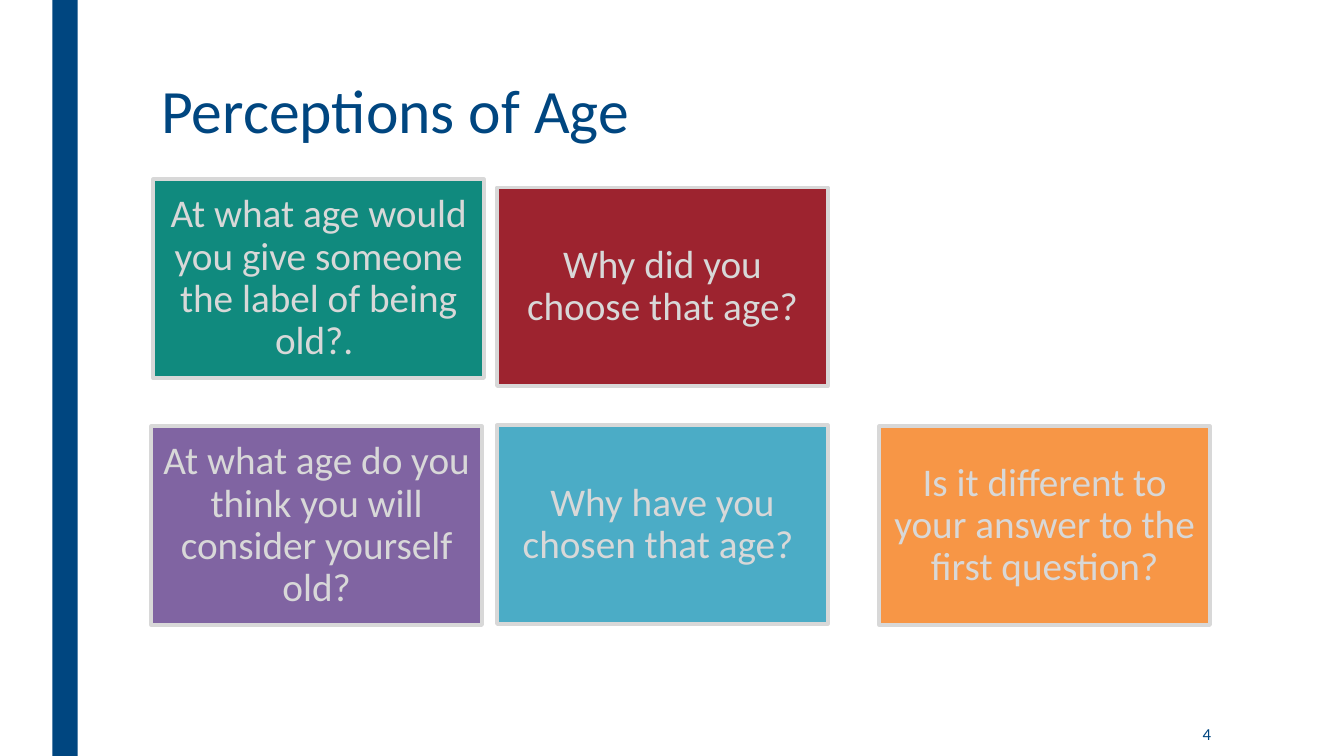
"""Build the Perceptions of Age slide."""
import pptx
import pptx.dml.color
import pptx.enum.shapes
import pptx.enum.text
import pptx.util

Inches = pptx.util.Inches
Pt = pptx.util.Pt
Align = pptx.enum.text.PP_ALIGN
Anchor = pptx.enum.text.MSO_ANCHOR


def tint(form, code):
    form.rgb = pptx.dml.color.RGBColor.from_string(code)


def apply(item, values):
    for name, value in values.items():
        setattr(item, name, value)


class Deck:
    navy = "004680"
    pale = "D8D8D8"
    font = "Calibri"

    def __init__(self):
        self.file = pptx.Presentation()
        apply(self.file, {"slide_width": Inches(13.33), "slide_height": Inches(7.5)})
        self.slide = self.file.slides.add_slide(self.file.slide_layouts[5])

    def label(self, shape, text, size, color, frame, para):
        box = shape.text_frame
        box.text = text
        apply(box, {"word_wrap": True, **frame})
        line = box.paragraphs[0]
        apply(line, para)
        apply(line.font, {"name": self.font, "size": Pt(size)})
        tint(line.font.color, color)

    def title(self, text, *place):
        shape = self.slide.shapes.title
        spot = map(Inches, place)
        apply(shape, dict(zip(("left", "top", "width", "height"), spot)))
        self.label(shape, text, 44, self.navy,
                   {"vertical_anchor": Anchor.TOP,
                    "auto_size": pptx.enum.text.MSO_AUTO_SIZE.NONE},
                   {"alignment": Align.LEFT, "line_spacing": 0.89})

    def block(self, fill, *place):
        kind = pptx.enum.shapes.MSO_SHAPE.RECTANGLE
        shape = self.slide.shapes.add_shape(kind, *map(Inches, place))
        shape.shadow.inherit = False
        shape.fill.solid()
        tint(shape.fill.fore_color, fill)
        shape.line.fill.background()
        return shape

    def card(self, text, fill, left, top):
        shape = self.block(fill, left, top, 3.28, 1.97)
        tint(shape.line.color, self.pale)
        shape.line.width = Pt(2.75)
        sides = ("left", "top", "right", "bottom")
        frame = {f"margin_{side}": Inches(0.12) for side in sides}
        self.label(shape, text, 28, self.pale,
                   {"vertical_anchor": Anchor.MIDDLE, **frame},
                   {"alignment": Align.CENTER, "line_spacing": 0.9})

    def number(self, text, *place):
        shape = self.slide.shapes.add_textbox(*map(Inches, place))
        self.label(shape, text, 12, self.navy,
                   {"vertical_anchor": Anchor.MIDDLE},
                   {"alignment": Align.RIGHT, "space_after": Pt(6)})


def main():
    deck = Deck()
    deck.block(deck.navy, 0.52, 0, 0.25, 7.5)
    deck.title("Perceptions of Age", 1.5, 0.75, 10.5, 1.62)
    deck.number("4", 10.36, 7.06, 1.75, 0.44)
    cards = [
        ("At what age would you give someone the label of being old?. ",
         "108A7E", 1.52, 1.78),
        ("Why did you choose that age?", "9D232F", 4.93, 1.86),
        ("At what age do you think you will consider yourself old?",
         "8064A2", 1.5, 4.23),
        ("Why have you chosen that age? ", "4BACC6", 4.93, 4.22),
        ("Is it different to your answer to the first question?",
         "F79646", 8.72, 4.23),
    ]
    for card in cards:
        deck.card(*card)
    deck.file.save("out.pptx")


if __name__ == "__main__":
    main()
